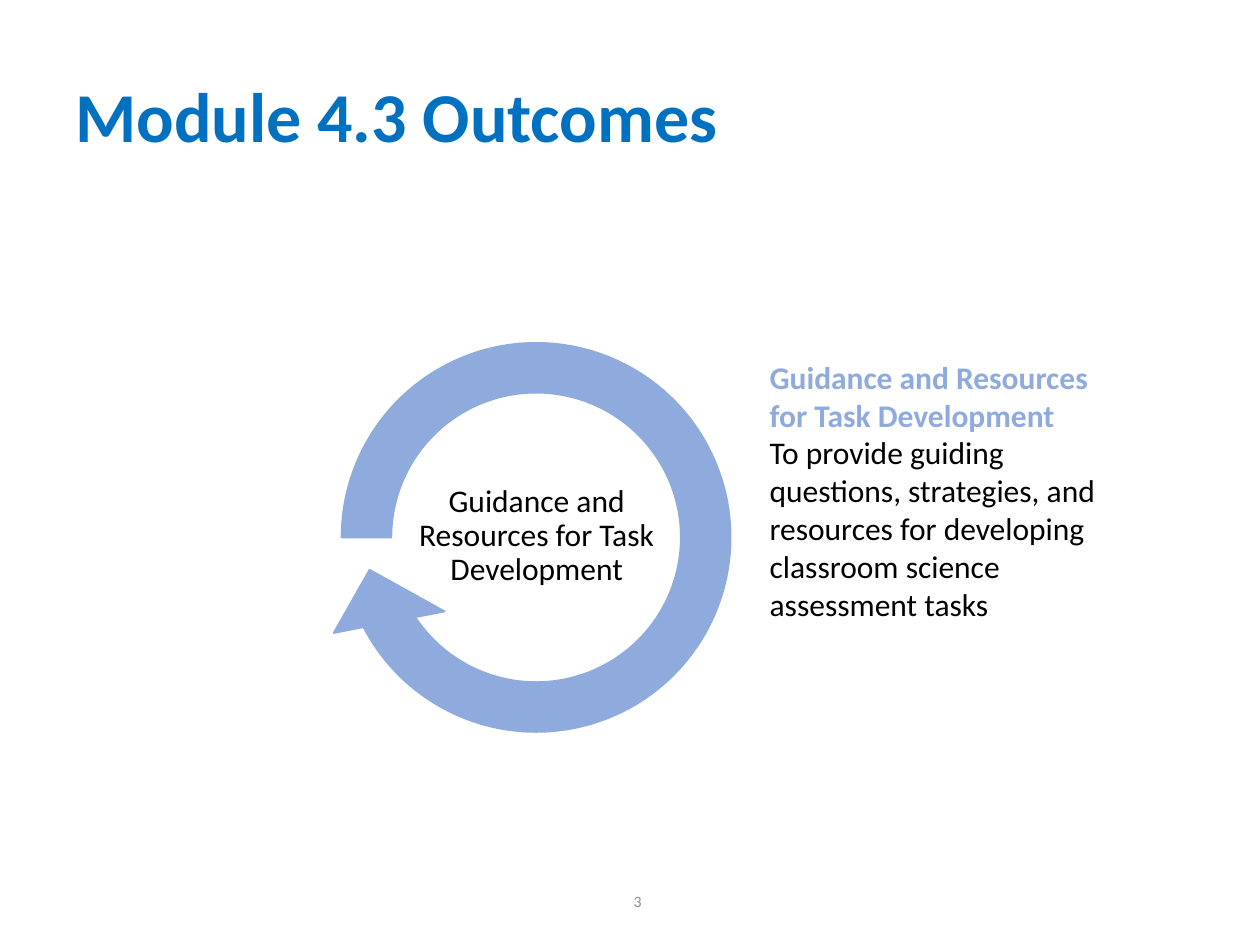
from dataclasses import dataclass

from pptx import Presentation
from pptx.dml.color import RGBColor
from pptx.enum import shapes, text
from pptx.util import Inches, Pt


@dataclass(frozen=True)
class Theme:
    font: str = "Calibri"
    title: str = "0070C0"
    accent: str = "8FAADC"
    body: str = "000000"
    muted: str = "8C8C8C"
    title_size: int = 40
    body_size: int = 18
    number_size: int = 9


THEME = Theme()

TITLE = "Module 4.3 Outcomes"
TOPIC = "Guidance and Resources for Task Development"
OUTCOME = (
    "To provide guiding questions, strategies, and resources "
    "for developing classroom science assessment tasks"
)
PAGE_NUMBER = "3"

# left, top, width, height in inches
TITLE_BOX = (0.5, 0.33, 9, 1.25)
ARROW_BOX = (2.46, 2.47, 3.59, 3.59)
TOPIC_BOX = (3.26, 3.76, 2, 1)
OUTCOME_BOX = (6.01, 2.79, 3.05, 2.22)
NUMBER_BOX = (2.94, 6.95, 2.25, 0.4)

# band thickness, head angle, end angle, start angle, head width
ARROW_ADJUSTMENTS = (0.11, 11.42, 90, 108, 0.125)


def rgb(value):
    return RGBColor.from_string(value)


def lengths(box):
    return [Inches(value) for value in box]


def write(paragraph, content, *, size=THEME.body_size, color=THEME.body,
          bold=False, align=text.PP_ALIGN.LEFT, spacing=None):
    paragraph.alignment = align
    if spacing:
        paragraph.line_spacing = spacing
    run = paragraph.add_run()
    run.text = content
    font = run.font
    font.name = THEME.font
    font.size = Pt(size)
    font.bold = bold
    font.color.rgb = rgb(color)


def set_frame(frame, *, anchor=text.MSO_ANCHOR.MIDDLE, inset=None):
    frame.word_wrap = True
    frame.auto_size = text.MSO_AUTO_SIZE.NONE
    frame.vertical_anchor = anchor
    if inset is not None:
        frame.margin_left = frame.margin_right = Inches(inset)
        frame.margin_top = frame.margin_bottom = Inches(inset)
    return frame


def add_text_frame(slide, box, **options):
    return set_frame(slide.shapes.add_textbox(*lengths(box)).text_frame, **options)


def add_title(slide):
    title = slide.shapes.title
    title.left, title.top, title.width, title.height = lengths(TITLE_BOX)
    frame = set_frame(title.text_frame)
    write(frame.paragraphs[0], TITLE, size=THEME.title_size,
          color=THEME.title, bold=True, spacing=0.9)


def add_cycle(slide):
    """Draw the circular arrow with the topic at its centre."""
    arrow = slide.shapes.add_shape(
        shapes.MSO_SHAPE.CIRCULAR_ARROW, *lengths(ARROW_BOX))
    for index, value in enumerate(ARROW_ADJUSTMENTS):
        arrow.adjustments[index] = value
    arrow.shadow.inherit = False
    arrow.fill.solid()
    arrow.fill.fore_color.rgb = rgb(THEME.accent)
    arrow.line.color.rgb = rgb(THEME.accent)
    arrow.line.width = Pt(1)

    frame = add_text_frame(slide, TOPIC_BOX, inset=0.01)
    write(frame.paragraphs[0], TOPIC, align=text.PP_ALIGN.CENTER, spacing=0.9)


def add_outcome(slide):
    frame = add_text_frame(slide, OUTCOME_BOX, anchor=text.MSO_ANCHOR.TOP)
    write(frame.paragraphs[0], TOPIC, color=THEME.accent, bold=True)
    write(frame.add_paragraph(), OUTCOME)


def add_page_number(slide):
    frame = add_text_frame(slide, NUMBER_BOX)
    write(frame.paragraphs[0], PAGE_NUMBER, size=THEME.number_size,
          color=THEME.muted, align=text.PP_ALIGN.RIGHT)


def main():
    presentation = Presentation()
    presentation.slide_width, presentation.slide_height = Inches(10), Inches(7.5)
    title_only = presentation.slide_layouts[5]
    slide = presentation.slides.add_slide(title_only)
    add_page_number(slide)
    add_title(slide)
    add_cycle(slide)
    add_outcome(slide)
    presentation.save("out.pptx")


if __name__ == "__main__":
    main()
